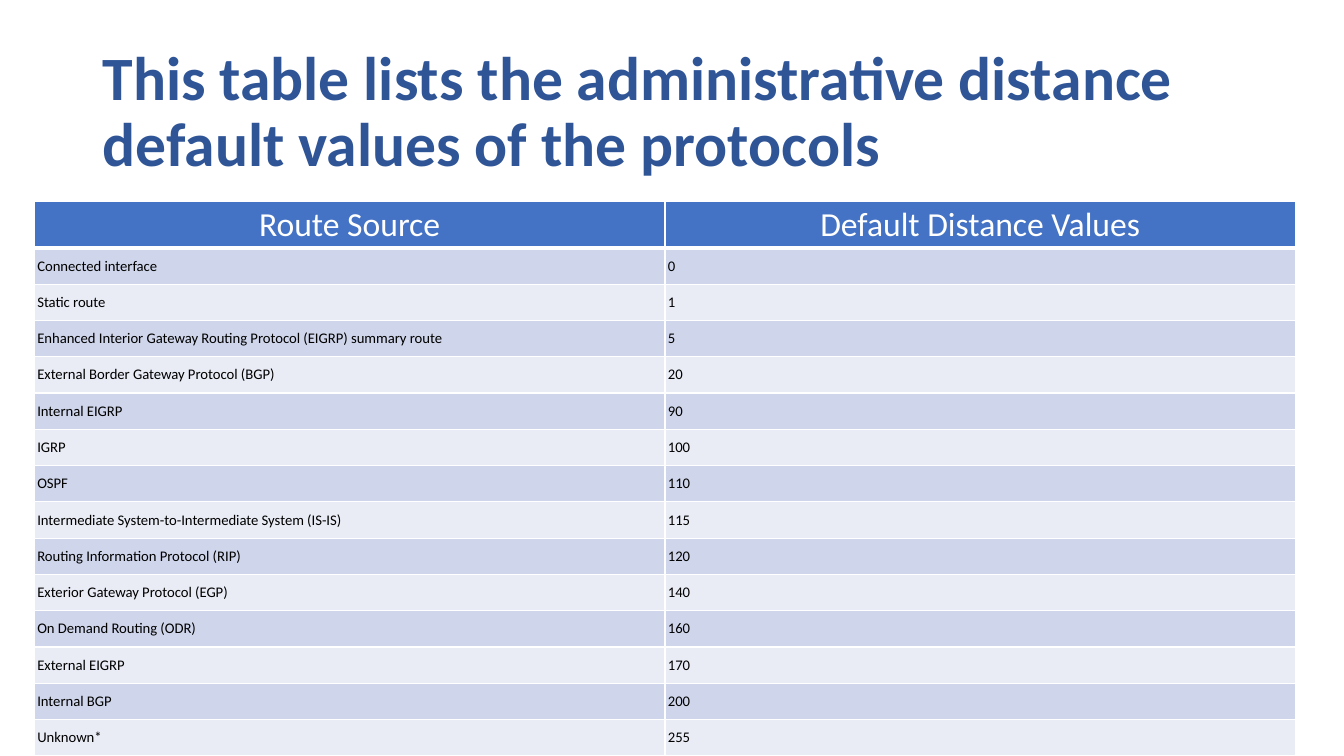
from lxml.etree import SubElement
from pptx import Presentation
from pptx.dml.color import RGBColor
from pptx.enum.text import MSO_ANCHOR as Anchor, PP_ALIGN as Align
from pptx.oxml.ns import qn
from pptx.util import Inches, Pt

COLORS = {
    "title": "2F5597", "header": "4472C4", "odd row": "CFD5EA",
    "even row": "E9EBF5", "white": "FFFFFF", "black": "000000",
}
TITLE = "This table lists the administrative distance default values of the protocols"
HEADINGS = ("Route Source", "Default Distance Values")
DISTANCES = [
    ("Connected interface", 0),
    ("Static route", 1),
    ("Enhanced Interior Gateway Routing Protocol (EIGRP) summary route", 5),
    ("External Border Gateway Protocol (BGP)", 20),
    ("Internal EIGRP", 90),
    ("IGRP", 100),
    ("OSPF", 110),
    ("Intermediate System-to-Intermediate System (IS-IS)", 115),
    ("Routing Information Protocol (RIP)", 120),
    ("Exterior Gateway Protocol (EGP)", 140),
    ("On Demand Routing (ODR)", 160),
    ("External EIGRP", 170),
    ("Internal BGP", 200),
    ("Unknown*", 255),
]
HEADER_HEIGHT, ROW_HEIGHT = 0.41, 0.36


def write(frame, text, size, color, bold=False, align=Align.LEFT, spacing=1.0):
    paragraph = frame.paragraphs[0]
    paragraph.alignment = align
    paragraph.line_spacing = spacing
    run = paragraph.add_run()
    run.text = text
    run.font.name = "Calibri"
    run.font.size = Pt(size)
    run.font.bold = bold
    run.font.color.rgb = RGBColor.from_string(COLORS[color])


def style_cell(cell, fill, bottom_width=1):
    """Set the cell's margins, white borders and fill."""
    cell.vertical_anchor = Anchor.MIDDLE
    cell.margin_left = cell.margin_right = Inches(0.03)
    cell.margin_top = cell.margin_bottom = Inches(0.03)
    properties = cell._tc.get_or_add_tcPr()
    for side, width in (("L", 1), ("R", 1), ("T", 1), ("B", bottom_width)):
        line = SubElement(properties, qn(f"a:ln{side}"), w=str(Pt(width)))
        solid = SubElement(line, qn("a:solidFill"))
        SubElement(solid, qn("a:srgbClr"), val=COLORS["white"])
    cell.fill.solid()
    cell.fill.fore_color.rgb = RGBColor.from_string(COLORS[fill])


def add_title(slide, left, top, width, height):
    box = slide.shapes.add_textbox(*map(Inches, (left, top, width, height)))
    frame = box.text_frame
    frame.word_wrap = True
    frame.vertical_anchor = Anchor.MIDDLE
    write(frame, TITLE, 44, "title", bold=True, spacing=0.9)


def add_distance_table(slide, left, top, width):
    height = HEADER_HEIGHT + ROW_HEIGHT * len(DISTANCES)
    table = slide.shapes.add_table(
        len(DISTANCES) + 1, len(HEADINGS), *map(Inches, (left, top, width, height))
    ).table
    table.rows[0].height = Inches(HEADER_HEIGHT)
    for cell, heading in zip(table.rows[0].cells, HEADINGS):
        style_cell(cell, "header", bottom_width=3)
        write(cell.text_frame, heading, 24, "white", align=Align.CENTER)
    for number, values in enumerate(DISTANCES, start=1):
        row = table.rows[number]
        row.height = Inches(ROW_HEIGHT)
        for cell, value in zip(row.cells, values):
            style_cell(cell, "odd row" if number % 2 else "even row")
            write(cell.text_frame, str(value), 10.5, "black")


def main():
    presentation = Presentation()
    presentation.slide_width = Inches(13.33)
    presentation.slide_height = Inches(7.5)
    slide = presentation.slides.add_slide(presentation.slide_layouts[6])
    add_title(slide, 0.92, 0.4, 11.5, 1.45)
    add_distance_table(slide, 0.34, 2, 12.51)
    presentation.save("out.pptx")


if __name__ == "__main__":
    main()
